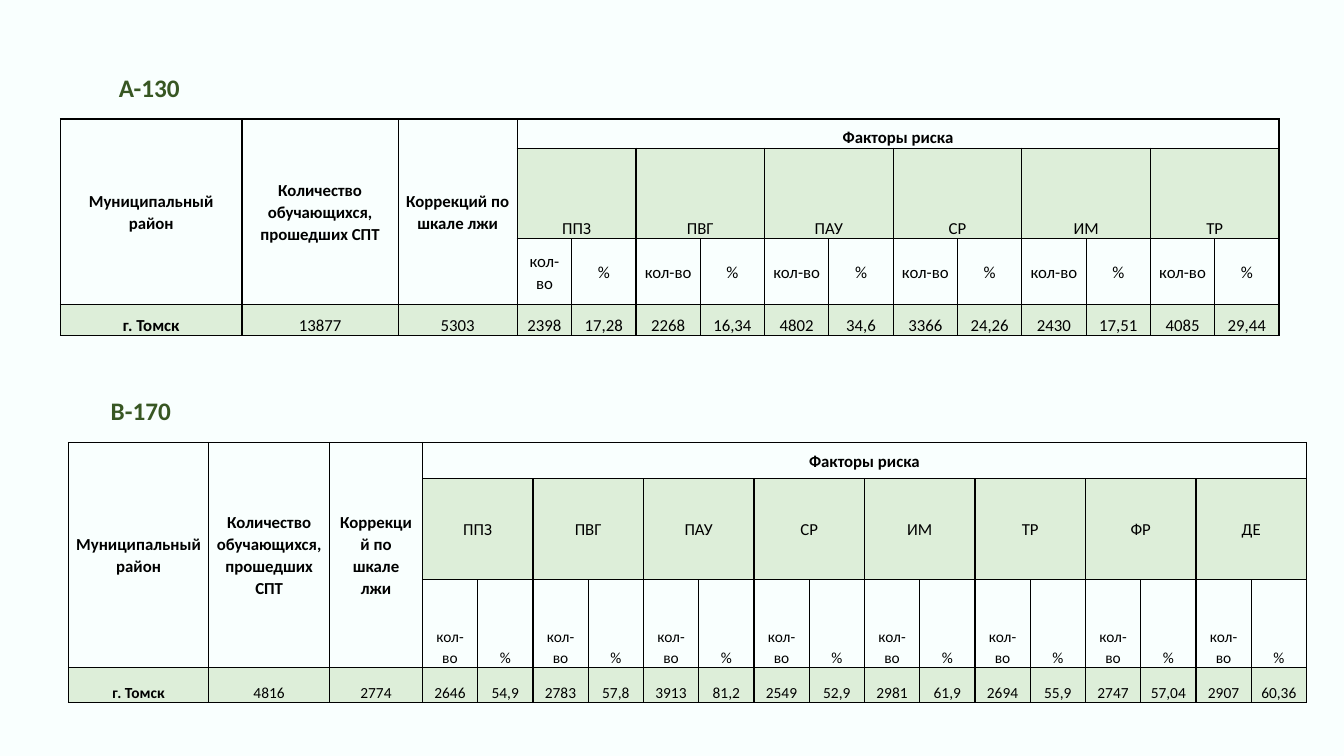
"""Builds a slide with two tables of risk factors among tested students."""
from lxml.etree import SubElement
from pptx import Presentation
from pptx.dml.color import RGBColor
from pptx.enum.text import MSO_ANCHOR, MSO_AUTO_SIZE, PP_ALIGN
from pptx.oxml.ns import qn
from pptx.util import Inches, Pt

BACKGROUND, GREEN, TITLE_COLOR, BLACK = "F9FFFE", "70AD47", "385723", "000000"
HEADERS = ["Муниципальный район", "Количество обучающихся, прошедших СПТ",
           "Коррекций по шкале лжи"]
FACTORS_TITLE = "Факторы риска"
MEASURES = ["кол-во", "%"]
MIDDLE, BOTTOM = MSO_ANCHOR.MIDDLE, MSO_ANCHOR.BOTTOM

TABLES = [
    dict(
        title="А-130", title_box=(1.08, 0.65, 0.81, 0.43),
        left=0.6, top=1.18, width=12.09,
        lead_columns=[1.8, 1.55, 1.18, 0.54], rows=[0.29, 0.9, 0.64, 0.31],
        anchors=[BOTTOM, BOTTOM, MIDDLE, BOTTOM], small=12,
        factors=["ППЗ", "ПВГ", "ПАУ", "СР", "ИМ", "ТР"],
        values=["г. Томск", "13877", "5303", "2398", "17,28", "2268", "16,34",
                "4802", "34,6", "3366", "24,26", "2430", "17,51", "4085", "29,44"],
    ),
    dict(
        title="В-170", title_box=(1, 3.85, 0.8, 0.43),
        left=0.68, top=4.39, width=12.28,
        lead_columns=[1.39, 1.2, 0.92], rows=[0.36, 1, 0.47, 0.35],
        anchors=[MIDDLE, MIDDLE, BOTTOM, BOTTOM], small=11,
        factors=["ППЗ", "ПВГ", "ПАУ", "СР", "ИМ", "ТР", "ФР", "ДЕ"],
        values=["г. Томск", "4816", "2774", "2646", "54,9", "2783", "57,8",
                "3913", "81,2", "2549", "52,9", "2981", "61,9", "2694", "55,9",
                "2747", "57,04", "2907", "60,36"],
    ),
]


def color(value):
    return RGBColor.from_string(value)


def write(frame, text, size=12, bold=False, fill=BLACK, align=PP_ALIGN.CENTER, after=0):
    paragraph = frame.paragraphs[0]
    paragraph.alignment = align
    paragraph.line_spacing = 1.07
    paragraph.space_after = Pt(after)
    run = paragraph.add_run()
    run.text = text
    run.font.name = "Calibri"
    run.font.size = Pt(size)
    run.font.bold = bold
    run.font.color.rgb = color(fill)


def style_cell(cell, shaded):
    cell.margin_left = cell.margin_right = Inches(0.07)
    cell.margin_top = cell.margin_bottom = 0
    properties = cell._tc.get_or_add_tcPr()
    for side in ("a:lnL", "a:lnR", "a:lnT", "a:lnB"):
        line = SubElement(properties, qn(side), w=str(Pt(1)))
        SubElement(SubElement(line, qn("a:solidFill")), qn("a:srgbClr"), val=BLACK)
    if shaded:
        cell.fill.solid()
        cell.fill.fore_color.rgb = color(GREEN)
        tint = properties.find(qn("a:solidFill")).find(qn("a:srgbClr"))
        SubElement(tint, qn("a:alpha"), val="20000")
    else:
        cell.fill.background()


def add_title(slide, data):
    box = slide.shapes.add_textbox(*map(Inches, data["title_box"]))
    frame = box.text_frame
    frame.word_wrap = False
    frame.auto_size = MSO_AUTO_SIZE.SHAPE_TO_FIT_TEXT
    write(frame, data["title"], size=18, bold=True, fill=TITLE_COLOR,
          align=PP_ALIGN.LEFT, after=8)


def add_factor_table(slide, data):
    lead, rows, small = data["lead_columns"], data["rows"], data["small"]
    fixed, count = len(HEADERS), len(data["values"])
    rest = count - len(lead)
    widths = lead + [(data["width"] - sum(lead)) / rest] * rest
    table = slide.shapes.add_table(
        len(rows), count, Inches(data["left"]), Inches(data["top"]),
        Inches(data["width"]), Inches(sum(rows))).table
    table.first_row = table.horz_banding = False
    for column, width in zip(table.columns, widths):
        column.width = Inches(width)
    for row, height in zip(table.rows, rows):
        row.height = Inches(height)
    for row in range(len(rows)):
        for column in range(count):
            shaded = row == 3 or (row == 1 and column >= fixed)
            style_cell(table.cell(row, column), shaded)

    def put(row, column, text, anchor=None, last=None, **style):
        cell = table.cell(row, column)
        if last:
            cell.merge(table.cell(*last))
        cell.vertical_anchor = anchor or data["anchors"][row]
        write(cell.text_frame, text, **style)

    for column, header in enumerate(HEADERS):
        put(0, column, header, anchor=MIDDLE, last=(2, column), bold=True)
    put(0, fixed, FACTORS_TITLE, last=(0, count - 1), bold=True)
    for index, factor in enumerate(data["factors"]):
        start = fixed + index * len(MEASURES)
        put(1, start, factor, last=(1, start + 1))
        for offset, measure in enumerate(MEASURES):
            put(2, start + offset, measure, size=small)
    for column, value in enumerate(data["values"]):
        put(3, column, value, size=small, bold=column == 0)


def main():
    presentation = Presentation()
    presentation.slide_width = Inches(13.33)
    presentation.slide_height = Inches(7.5)
    slide = presentation.slides.add_slide(presentation.slide_layouts[6])
    slide.background.fill.solid()
    slide.background.fill.fore_color.rgb = color(BACKGROUND)
    for data in reversed(TABLES):
        add_factor_table(slide, data)
    for data in TABLES:
        add_title(slide, data)
    presentation.save("out.pptx")


if __name__ == "__main__":
    main()
